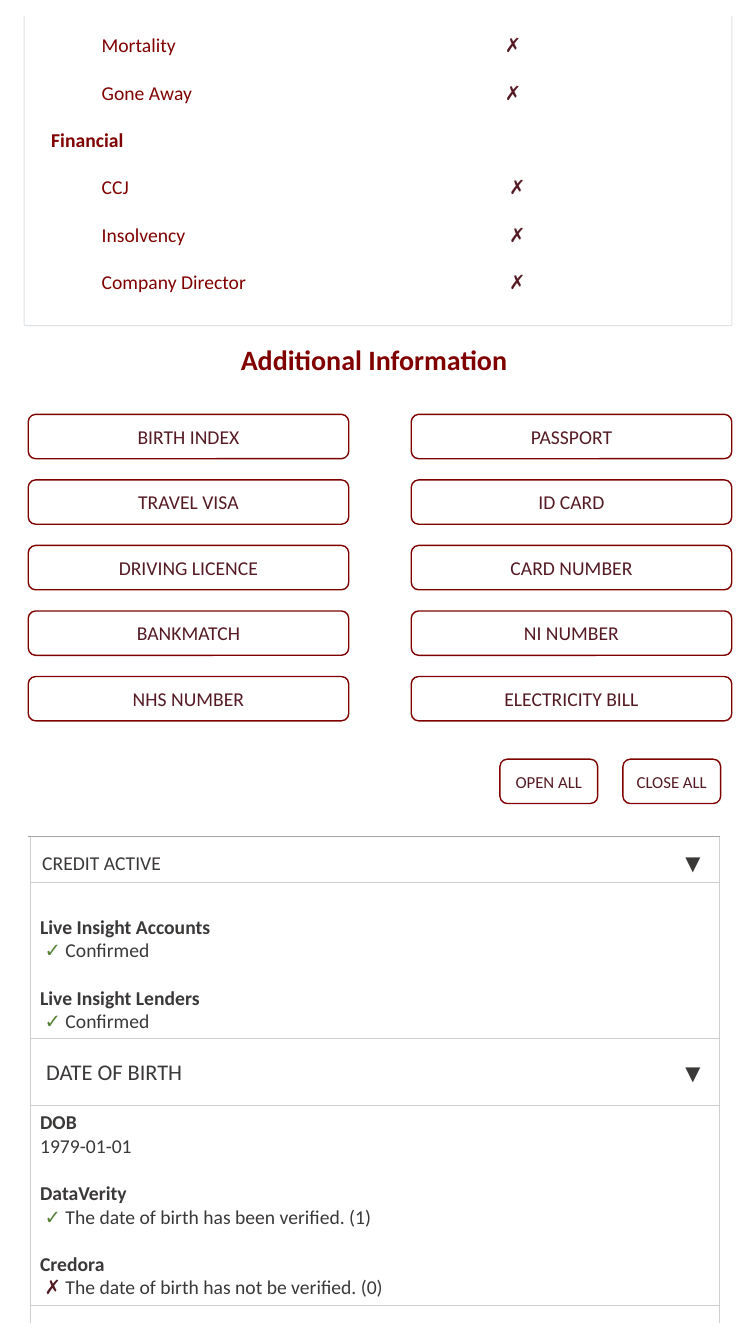
from pptx import Presentation
from pptx import util as u
from pptx.dml.color import RGBColor
from pptx.enum import shapes, text
from pptx.oxml.ns import qn
from lxml import etree

MAROON, WINE, INK, GREEN = "800000", "551B25", "3B3838", "548235"
RULE, GREY, PANEL = "D0CECE", "A5A5A5", "DEE2E6"


def px(n):
    return u.Emu(n * 9144)


def rgb(value):
    return RGBColor.from_string(value)


def write(p, content, size=14, color=INK, bold=False):
    r = p.add_run()
    r.text = content
    r.font.name = "Calibri"
    r.font.size = u.Pt(size)
    r.font.bold = bold
    r.font.color.rgb = rgb(color)


def set_tabs(p, stops):
    tabs = etree.SubElement(p._p.get_or_add_pPr(), qn("a:tabLst"))
    for stop in stops:
        etree.SubElement(tabs, qn("a:tab"), pos=str(px(stop)), algn="l")


class Page:
    """Holds the style of the report page and draws on its slide."""

    def __init__(self, prs):
        self.s = prs.slides.add_slide(prs.slide_layouts[6])

    def style(self, sp, line, width, fill=None):
        sp.shadow.inherit = False
        sp.line.color.rgb = rgb(line)
        sp.line.width = u.Pt(width)
        if fill:
            sp.fill.solid()
            sp.fill.fore_color.rgb = rgb(fill)
        else:
            sp.fill.background()

    def paragraphs(self, tf, rows, gap_before=(), tabs=()):
        tf.word_wrap = True
        for i, runs in enumerate(rows):
            p = tf.add_paragraph() if i else tf.paragraphs[0]
            p.alignment = text.PP_ALIGN.LEFT
            if i in gap_before:
                p.space_before = u.Pt(17)
            if tabs:
                set_tabs(p, tabs)
            for content, fmt in runs:
                write(p, content, **fmt)

    def label(self, x, y, w, h, rows, **layout):
        sp = self.s.shapes.add_textbox(px(x), px(y), px(w), px(h))
        self.paragraphs(sp.text_frame, rows, **layout)

    def button(self, x, y, w, caption, size=14):
        sp = self.s.shapes.add_shape(
            shapes.MSO_SHAPE.ROUNDED_RECTANGLE, px(x), px(y), px(w), px(44))
        self.style(sp, MAROON, 1, "FFFFFF")
        tf = sp.text_frame
        tf.word_wrap = True
        tf.vertical_anchor = text.MSO_ANCHOR.MIDDLE
        p = tf.paragraphs[0]
        p.alignment = text.PP_ALIGN.CENTER
        write(p, caption, size=size, color=WINE)

    def details(self, y, h, rows, gap_before, top=5):
        sp = self.s.shapes.add_shape(
            shapes.MSO_SHAPE.RECTANGLE, px(30), px(y), px(684), px(h))
        self.style(sp, RULE, 0.75)
        sp.text_frame.vertical_anchor = text.MSO_ANCHOR.TOP
        sp.text_frame.margin_top = px(top)
        self.paragraphs(sp.text_frame, rows, gap_before)

    def heading(self, x, y, caption, size):
        row = [(caption, {"size": size}), ("\t", {"size": 16}), ("▼", {})]
        self.label(x, y, 685, 62, [row], tabs=[670 - x])

    def rule(self, x1, y1, x2, y2, color):
        c = self.s.shapes.add_connector(
            shapes.MSO_CONNECTOR.STRAIGHT, px(x1), px(y1), px(x2), px(y2))
        c.line.color.rgb = rgb(color)
        c.line.width = u.Pt(0.5)
        etree.SubElement(c._element.spPr, qn("a:effectLst"))

    def open_panel(self, points):
        fb = self.s.shapes.build_freeform(*points[0], scale=9144)
        fb.add_line_segments(points[1:], close=False)
        self.style(fb.convert_to_shape(), PANEL, 0.75)


def check_row(name, mark):
    return [(f"\t{name}\t", {"color": MAROON}), (mark, {"color": WINE})]


def title_row(name, color=INK):
    return [(name, {"bold": True, "color": color})]


def result_row(mark, color, result):
    return [(f" {mark} ", {"color": color}), (result, {})]


def main():
    prs = Presentation()
    prs.slide_width, prs.slide_height = px(750), px(1333)
    page = Page(prs)

    page.open_panel([(24, 16), (24, 322), (25, 323),
                     (725, 323), (726, 322), (726, 16)])
    checks = [check_row(name, "✗") for name in ("Mortality", "Gone Away")]
    checks.append(title_row("Financial", MAROON))
    checks += [check_row(name, " ✗")
               for name in ("CCJ", "Insolvency", "Company Director")]
    page.label(41, 28, 639, 269, checks,
               gap_before=range(1, len(checks)), tabs=[50, 450])

    page.label(229, 335, 292, 44, [
        [("Additional Information",
          {"size": 20, "color": MAROON, "bold": True})]])
    columns = {
        28: ("BIRTH INDEX", "TRAVEL VISA", "DRIVING LICENCE",
             "BANKMATCH", "NHS NUMBER"),
        408: ("PASSPORT", "ID CARD", "CARD NUMBER",
              "NI NUMBER", "ELECTRICITY BILL"),
    }
    for x, captions in columns.items():
        for i, caption in enumerate(captions):
            page.button(x, 411 + 65 * i, 318, caption)
    for x, caption in ((496, "OPEN ALL"), (618, "CLOSE ALL")):
        page.button(x, 753, 97, caption, size=12)

    page.rule(28, 830, 714, 830, GREY)
    page.heading(32, 836, "CREDIT ACTIVE", 14)
    confirmed = result_row("✓", GREEN, "Confirmed")
    page.details(875, 155, [
        title_row("Live Insight Accounts"), confirmed,
        title_row("Live Insight Lenders"), confirmed,
    ], gap_before=[2], top=32)
    for x in (714, 30):
        page.rule(x, 830, x, 1312, RULE)

    page.heading(36, 1045, "DATE OF BIRTH", 16)
    page.details(1096, 199, [
        title_row("DOB"), [("1979-01-01", {})],
        title_row("DataVerity"),
        result_row("✓", GREEN, "The date of birth has been verified. (1)"),
        title_row("Credora"),
        result_row("✗", WINE, "The date of birth has not be verified. (0)"),
    ], gap_before=[2, 4])

    prs.save("out.pptx")


if __name__ == "__main__":
    main()
